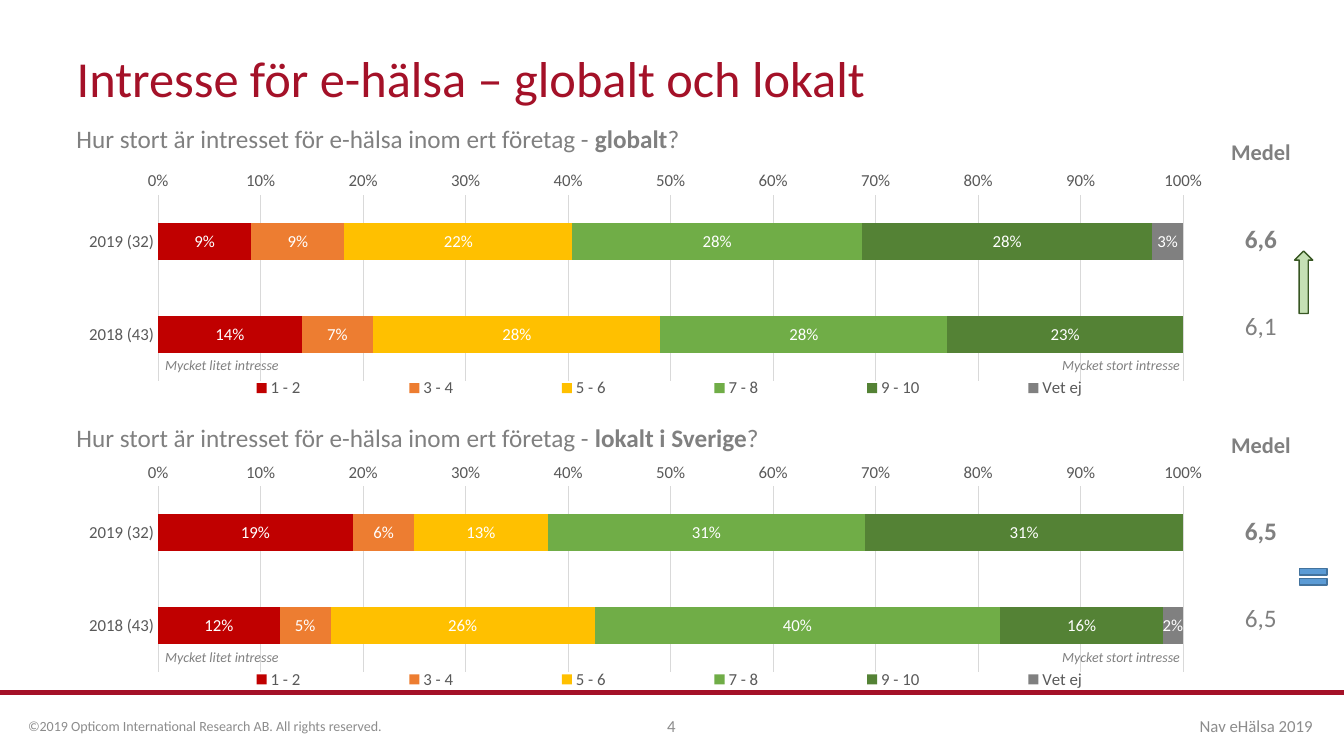
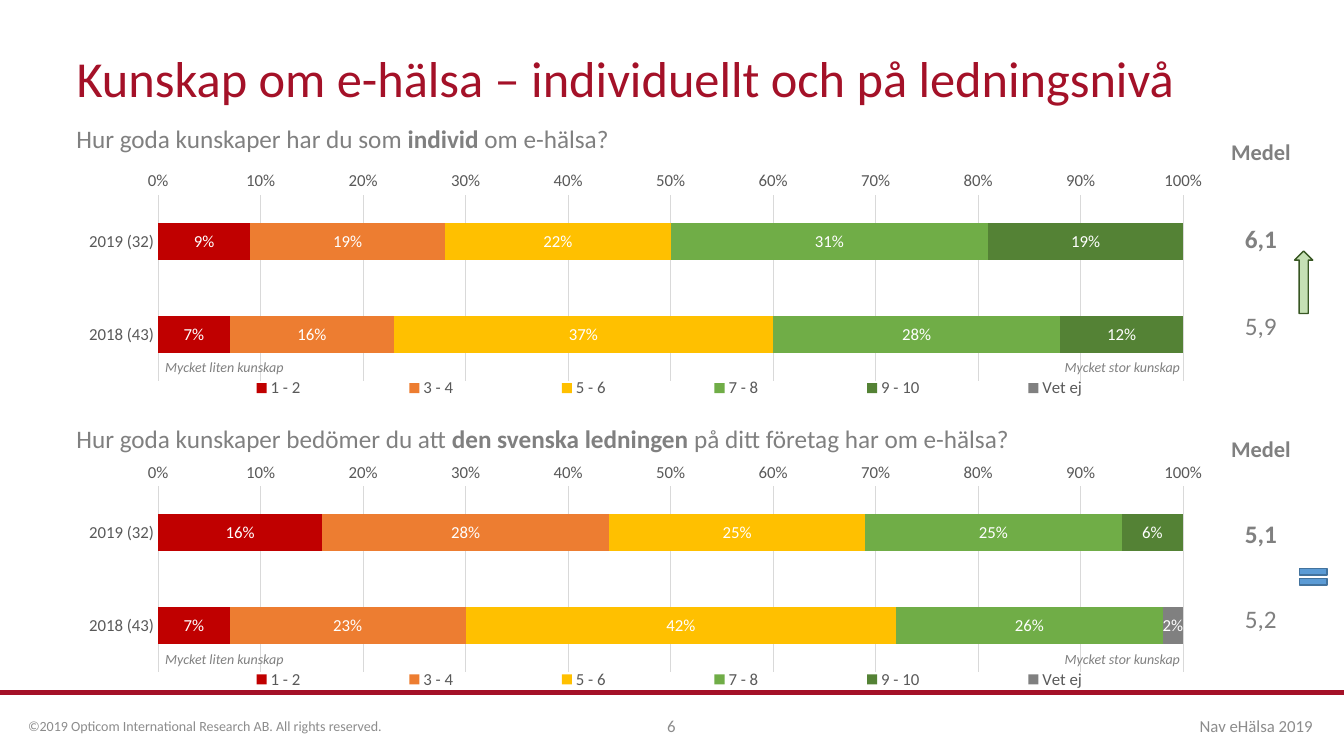
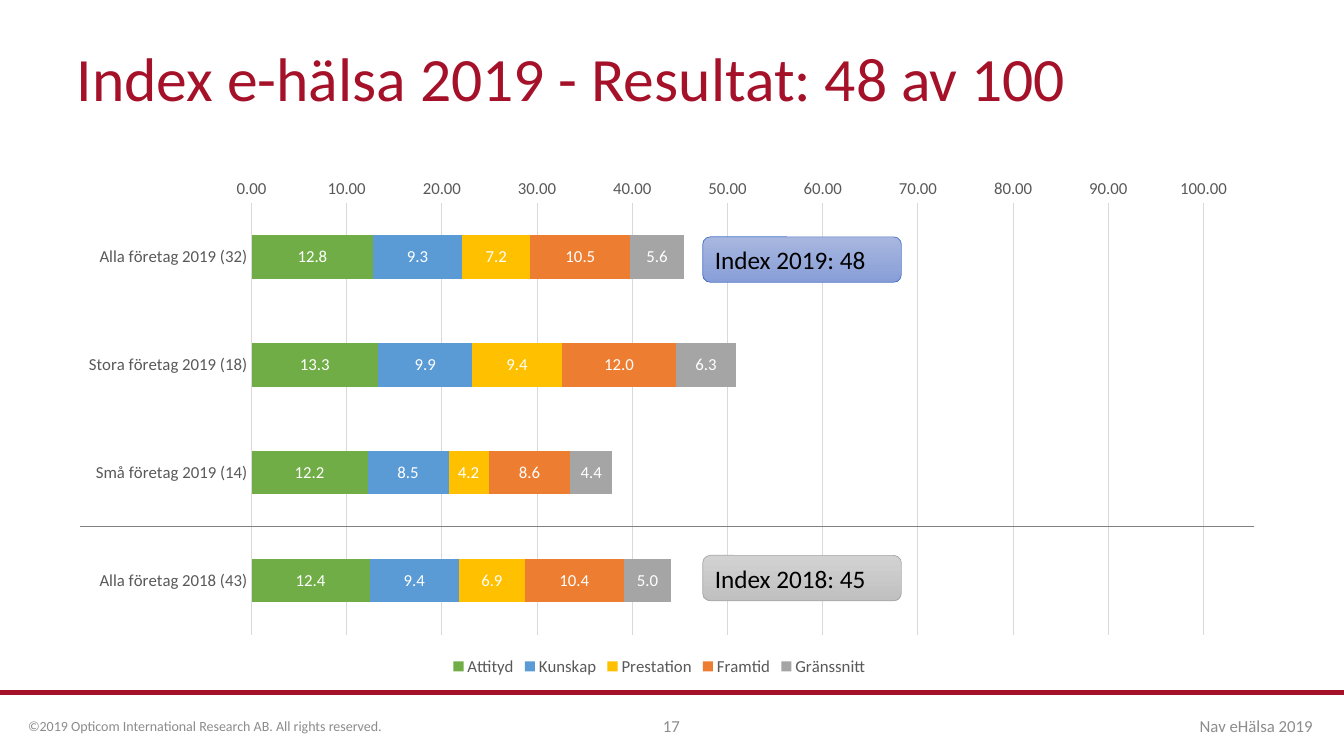
"""Builds three survey result slides about e-health."""
import dataclasses

import pptx
import pptx.chart.data
import pptx.dml.color
import pptx.enum.chart
import pptx.enum.shapes
import pptx.enum.text
import pptx.oxml
import pptx.oxml.ns
import pptx.util

Inches = pptx.util.Inches
Pt = pptx.util.Pt
RGBColor = pptx.dml.color.RGBColor
Align = pptx.enum.text.PP_ALIGN
Anchor = pptx.enum.text.MSO_ANCHOR
Shape = pptx.enum.shapes.MSO_SHAPE
ChartType = pptx.enum.chart.XL_CHART_TYPE

FONT = "Calibri"
CRIMSON = RGBColor(0xA4, 0x11, 0x28)
GREY = RGBColor(0x80, 0x80, 0x80)
FOOTER_GREY = RGBColor(0x8C, 0x8C, 0x8C)
AXIS_TEXT = RGBColor(0x59, 0x59, 0x59)
GRID = RGBColor(0xD9, 0xD9, 0xD9)
SILVER = RGBColor(0xA5, 0xA5, 0xA5)
WHITE = RGBColor(0xFF, 0xFF, 0xFF)
BLACK = RGBColor(0, 0, 0)
RED = RGBColor(0xC0, 0, 0)
ORANGE = RGBColor(0xED, 0x7D, 0x31)
YELLOW = RGBColor(0xFF, 0xC0, 0)
GREEN = RGBColor(0x70, 0xAD, 0x47)
DARK_GREEN = RGBColor(0x54, 0x82, 0x35)
BLUE = RGBColor(0x5B, 0x9B, 0xD5)
BLUE_EDGE = RGBColor(0x43, 0x73, 0x9E)
PALE_GREEN = RGBColor(0xC5, 0xE0, 0xB4)
GREEN_EDGE = RGBColor(0x38, 0x57, 0x23)
CALLOUT_BLUE = (RGBColor(0xA8, 0xB7, 0xDF), RGBColor(0x88, 0x9E, 0xD7))
CALLOUT_BLUE_EDGE = RGBColor(0x44, 0x72, 0xC4)
CALLOUT_GREY = (RGBColor(0xD2, 0xD2, 0xD2), RGBColor(0xC0, 0xC0, 0xC0))

RATINGS = {"1 - 2": RED, "3 - 4": ORANGE, "5 - 6": YELLOW,
           "7 - 8": GREEN, "9 - 10": DARK_GREEN, "Vet ej": GREY}
INDEX_PARTS = {"Attityd": GREEN, "Kunskap": BLUE, "Prestation": YELLOW,
               "Framtid": ORANGE, "Gränssnitt": SILVER}
YEARS = ["2019 (32)", "2018 (43)"]


@dataclasses.dataclass
class Panel:
    """One question with its chart values, mean values and their top edges."""
    question: tuple
    values: list
    means: tuple
    question_top: float
    chart_top: float
    table_top: float
    table_bottom: float


def style(paragraph, size, color, bold=False, align=Align.LEFT):
    """Formats a whole paragraph."""
    paragraph.alignment = align
    font = paragraph.font
    font.name, font.size, font.bold = FONT, Pt(size), bold
    font.color.rgb = color


def add_text(page, text, left, top, width, height, size, color=GREY,
             align=Align.LEFT, anchor=Anchor.TOP):
    """Adds a wrapping one-paragraph text box and returns the paragraph."""
    box = page.shapes.add_textbox(Inches(left), Inches(top), Inches(width), Inches(height))
    box.text_frame.word_wrap = True
    box.text_frame.vertical_anchor = anchor
    paragraph = box.text_frame.paragraphs[0]
    paragraph.text = text
    style(paragraph, size, color, align=align)
    return paragraph


def add_line(page, left, right, y, color, weight):
    """Adds a horizontal line without shadow."""
    line = page.shapes.add_connector(
        pptx.enum.shapes.MSO_CONNECTOR.STRAIGHT,
        Inches(left), Inches(y), Inches(right), Inches(y))
    line.line.color.rgb = color
    line.line.width = Pt(weight)
    line.element.spPr.append(pptx.oxml.parse_xml(
        f"<a:effectLst {pptx.oxml.ns.nsdecls('a')}/>"))


def add_page(deck, title, number, title_size=36):
    """Adds a page with title, rule and footer."""
    page = deck.slides.add_slide(deck.slide_layouts[5])
    add_line(page, 0, 13.33, 6.87, CRIMSON, 3)
    box = page.shapes.title
    box.left, box.top, box.width, box.height = map(Inches, (0.66, 0.4, 11.5, 0.81))
    box.text_frame.text = title
    box.text_frame.vertical_anchor = Anchor.MIDDLE
    paragraph = box.text_frame.paragraphs[0]
    paragraph.line_spacing = 0.9
    style(paragraph, title_size, CRIMSON)
    footers = (
        ("©2019 Opticom International Research AB. All rights reserved.",
         0.18, 3.74, 10, Align.LEFT),
        (str(number), 5.16, 3, 12, Align.CENTER),
        ("Nav eHälsa 2019", 8.62, 4.5, 12, Align.RIGHT),
    )
    for text, left, width, size, align in footers:
        add_text(page, text, left, 7, width, 0.4, size, FOOTER_GREY, align, Anchor.MIDDLE)
    return page


def place_part(part, index, x, y, width, height, inner=False):
    """Sets the manual layout of a chart part, in fractions of the chart."""
    for old in part.xpath("c:layout"):
        part.remove(old)
    target = '<c:layoutTarget val="inner"/>' if inner else ""
    sizes = "".join(f'<c:{name} val="{value}"/>' for name, value in
                    zip("xywh", (x, y, width, height)))
    part.insert(index, pptx.oxml.parse_xml(
        f"<c:layout {pptx.oxml.ns.nsdecls('c')}><c:manualLayout>{target}"
        f'<c:xMode val="edge"/><c:yMode val="edge"/>{sizes}'
        "</c:manualLayout></c:layout>"))


def add_bars(page, kind, frame, categories, colors, values, label_format,
             axis_format, plot_area, legend_area=None):
    """Adds a stacked bar chart with labels and returns it."""
    data = pptx.chart.data.CategoryChartData(number_format=label_format)
    data.categories = categories
    for name, numbers in zip(colors, values):
        data.add_series(name, numbers)
    chart = page.shapes.add_chart(kind, *map(Inches, frame), data).chart
    chart.has_title = False
    chart.font.name, chart.font.size = FONT, Pt(12)
    chart.font.color.rgb = AXIS_TEXT
    chart.has_legend = True
    chart.legend.position = pptx.enum.chart.XL_LEGEND_POSITION.BOTTOM
    chart.legend.include_in_layout = False

    plot = chart.plots[0]
    plot.vary_by_categories = False
    plot.gap_width, plot.overlap = 150, 100
    for series, color in zip(plot.series, colors.values()):
        series.format.fill.solid()
        series.format.fill.fore_color.rgb = color
        labels = series.data_labels
        labels.show_value = True
        labels.number_format, labels.number_format_is_linked = label_format, False
        labels.font.name, labels.font.size = FONT, Pt(12)
        labels.font.color.rgb = WHITE

    rows, scale = chart.category_axis, chart.value_axis
    rows.reverse_order = True
    rows.format.line.color.rgb = GRID
    rows.format.line.width = Pt(0.75)
    scale.format.line.fill.background()
    scale.has_major_gridlines = True
    scale.major_gridlines.format.line.color.rgb = GRID
    scale.major_gridlines.format.line.width = Pt(0.75)
    scale.tick_labels.number_format = axis_format
    scale.tick_labels.number_format_is_linked = False
    for axis in (rows, scale):
        axis.major_tick_mark = pptx.enum.chart.XL_TICK_MARK.NONE

    root = chart.element
    root.xpath("c:chart")[0].addnext(pptx.oxml.parse_xml(
        f"<c:spPr {pptx.oxml.ns.nsdecls('c', 'a')}><a:noFill/><a:ln><a:noFill/></a:ln></c:spPr>"))
    place_part(root.xpath(".//c:plotArea")[0], 0, *plot_area, inner=True)
    if legend_area:
        place_part(root.xpath(".//c:legend")[0], 1, *legend_area)
    return chart


def add_means(page, panel):
    """Adds the one-column table of mean values."""
    height = panel.table_bottom - panel.table_top
    table = page.shapes.add_table(3, 1, Inches(12.09), Inches(panel.table_top),
                                  Inches(0.83), Inches(height)).table
    for index, text in enumerate(("Medel", *panel.means)):
        cell = table.cell(index, 0)
        cell.fill.background()
        cell.vertical_anchor = Anchor.MIDDLE
        cell.text = text
        style(cell.text_frame.paragraphs[0], 18 if index else 16, GREY,
              bold=index < 2, align=Align.CENTER)


def add_panel(page, panel, ends, note_offset):
    """Adds a question, its chart, its scale notes and its mean values."""
    paragraph = add_text(page, "", 0.66, panel.question_top, 11.5, 0.46, 18)
    paragraph.line_spacing = 0.9
    for index, text in enumerate(panel.question):
        span = paragraph.add_run()
        span.text = text
        span.font.bold = index == 1
    add_bars(page, ChartType.BAR_STACKED_100, (0.66, panel.chart_top, 11.5, 2.53),
             YEARS, RATINGS, panel.values, "0%", "0%",
             (0.079, 0.113, 0.884, 0.728), (0.075, 0.82, 0.89, 0.1))
    add_means(page, panel)
    for text, left, align in zip(ends, (1.54, 9.59), (Align.LEFT, Align.RIGHT)):
        note = add_text(page, text, left, panel.chart_top + note_offset, 2.21, 0.27,
                        10, align=align)
        note.font.italic = True


def add_symbol(page, kind, left, top, width, height, fill, edge):
    """Adds a plain trend symbol."""
    symbol = page.shapes.add_shape(kind, *map(Inches, (left, top, width, height)))
    symbol.shadow.inherit = False
    symbol.fill.solid()
    symbol.fill.fore_color.rgb = fill
    symbol.line.color.rgb = edge
    symbol.line.width = Pt(1)


def add_callout(page, text, top, shades, edge):
    """Adds a rounded index label with a vertical gradient."""
    callout = page.shapes.add_shape(Shape.ROUNDED_RECTANGLE, Inches(6.97), Inches(top),
                                    Inches(1.97), Inches(0.45))
    callout.shadow.inherit = False
    callout.fill.gradient()
    callout.fill.gradient_angle = 270
    for stop, shade in zip(callout.fill.gradient_stops, shades):
        stop.color.rgb = shade
    callout.line.color.rgb = edge
    callout.line.width = Pt(0.5)
    callout.text_frame.text = text
    callout.text_frame.vertical_anchor = Anchor.MIDDLE
    style(callout.text_frame.paragraphs[0], 18, BLACK)


def add_comparison(deck, title, number, panels, ends, note_offset):
    """Adds a page that compares two questions over two years."""
    page = add_page(deck, title, number)
    for panel in panels:
        add_panel(page, panel, ends, note_offset)
    add_symbol(page, Shape.UP_ARROW, 12.84, 2.49, 0.18, 0.62, PALE_GREEN, GREEN_EDGE)
    add_symbol(page, Shape.MATH_EQUAL, 12.84, 5.58, 0.37, 0.28, BLUE, BLUE_EDGE)


def add_index(deck):
    """Adds the page with the total index."""
    page = add_page(deck, "Index e-hälsa 2019 - Resultat: 48 av 100", 17, 44)
    chart = add_bars(
        page, ChartType.BAR_STACKED, (0.66, 1.67, 11.76, 5.08),
        ["Alla företag 2019 (32)", "Stora företag 2019 (18)",
         "Små företag 2019 (14)", "Alla företag 2018 (43)"],
        INDEX_PARTS,
        [(12.8, 13.3, 12.2, 12.4), (9.3, 9.9, 8.5, 9.4), (7.2, 9.4, 4.2, 6.9),
         (10.5, 12, 8.6, 10.4), (5.6, 6.3, 4.4, 5)],
        "#,##0.0", "0.00", (0.156, 0.068, 0.803, 0.843))
    chart.value_axis.minimum_scale = 0
    chart.value_axis.maximum_scale = 100
    chart.value_axis.major_unit = 10
    add_callout(page, "Index 2018: 45", 5.51, CALLOUT_GREY, SILVER)
    add_callout(page, "Index 2019: 48", 2.35, CALLOUT_BLUE, CALLOUT_BLUE_EDGE)
    add_line(page, 0.79, 12.44, 5.22, GREY, 0.5)


def main():
    """Builds and saves the deck."""
    deck = pptx.Presentation()
    deck.slide_width, deck.slide_height = Inches(13.33), Inches(7.5)
    upper = (1.21, 1.65, 1.09, 3.67)
    interest = "Hur stort är intresset för e-hälsa inom ert företag - "
    add_comparison(deck, "Intresse för e-hälsa – globalt och lokalt", 4, [
        Panel((interest, "globalt", "?"),
              [(0.09, 0.14), (0.09, 0.07), (0.22, 0.28), (0.28, 0.28),
               (0.28, 0.23), (0.03, None)],
              ("6,6", "6,1"), *upper),
        Panel((interest, "lokalt i Sverige", "?"),
              [(0.19, 0.12), (0.06, 0.05), (0.13, 0.26), (0.31, 0.4),
               (0.31, 0.16), (None, 0.02)],
              ("6,5", "6,5"), 4.17, 4.54, 3.99, 6.57),
    ], ("Mycket litet intresse", "Mycket stort intresse"), 1.84)
    add_comparison(deck, "Kunskap om e-hälsa – individuellt och på ledningsnivå", 6, [
        Panel(("Hur goda kunskaper har du som ", "individ", " om e-hälsa?"),
              [(0.09, 0.07), (0.19, 0.16), (0.22, 0.37), (0.31, 0.28),
               (0.19, 0.12), (None, None)],
              ("6,1", "5,9"), *upper),
        Panel(("Hur goda kunskaper bedömer du att ", "den svenska ledningen ",
               "på ditt företag har om e-hälsa?"),
              [(0.16, 0.07), (0.28, 0.23), (0.25, 0.42), (0.25, 0.26),
               (0.06, None), (None, 0.02)],
              ("5,1", "5,2"), 4.18, 4.54, 4.04, 6.57),
    ], ("Mycket liten kunskap", "Mycket stor kunskap"), 1.86)
    add_index(deck)
    deck.save("out.pptx")


if __name__ == "__main__":
    main()
